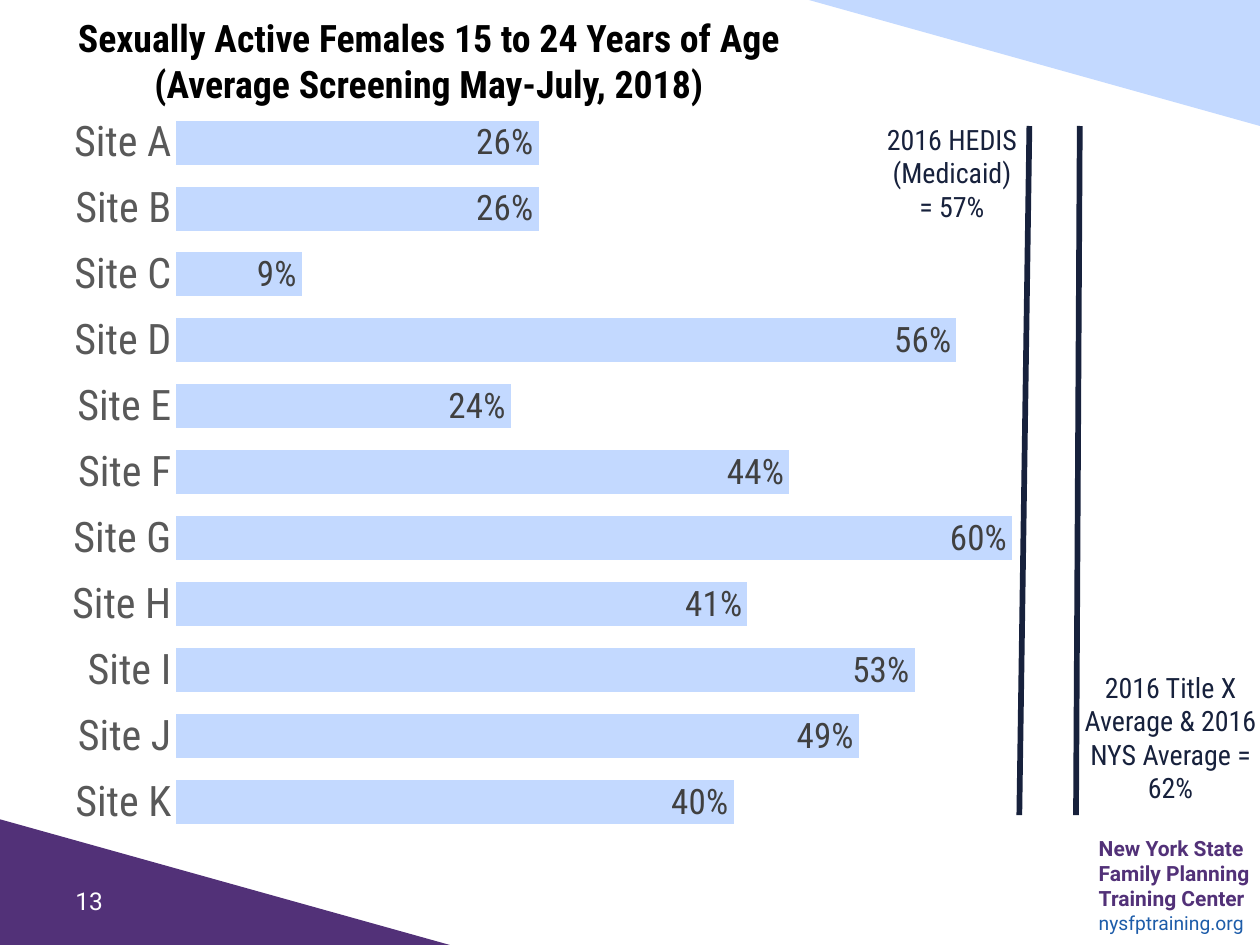
import pptx
import pptx.util
import pptx.chart.data
import pptx.dml.color
import pptx.enum.chart
import pptx.enum.shapes
import pptx.enum.text
import pptx.oxml
import pptx.oxml.ns
from pptx.util import Inches

PURPLE = "523178"
PALE_BLUE = "C3D9FF"
NAVY = "17213C"
BLACK = "000000"
WHITE = "FFFFFF"
CONDENSED = "Roboto Condensed"
ROBOTO = "Roboto"
CENTER = pptx.enum.text.PP_ALIGN.CENTER
LEFT = pptx.enum.text.PP_ALIGN.LEFT
TOP = pptx.enum.text.MSO_ANCHOR.TOP
MIDDLE = pptx.enum.text.MSO_ANCHOR.MIDDLE


def color(code):
    return pptx.dml.color.RGBColor.from_string(code)


def set_font(font, size, code, name, bold=False):
    font.size = pptx.util.Pt(size)
    font.color.rgb = color(code)
    font.name = name
    font.bold = bold


class SlideBuilder:
    def __init__(self, page):
        self.page = page

    def fill_text(self, box, lines, align, anchor=TOP, margin=None):
        frame = box.text_frame
        frame.word_wrap = True
        frame.auto_size = pptx.enum.text.MSO_AUTO_SIZE.NONE
        frame.vertical_anchor = anchor
        if margin is not None:
            frame.margin_left = frame.margin_right = Inches(margin)
            frame.margin_top = frame.margin_bottom = Inches(margin)
        for index, (words, *style) in enumerate(lines):
            para = frame.paragraphs[0] if index == 0 else frame.add_paragraph()
            para.text = words
            para.alignment = align
            set_font(para.font, *style)

    def title(self, left, top, width, height, lines):
        box = self.page.shapes.title
        box.left, box.top = Inches(left), Inches(top)
        box.width, box.height = Inches(width), Inches(height)
        self.fill_text(box, lines, CENTER)

    def text(self, left, top, width, height, lines, align=LEFT, **options):
        box = self.page.shapes.add_textbox(
            Inches(left), Inches(top), Inches(width), Inches(height))
        self.fill_text(box, lines, align, **options)

    def corner(self, left, top, width, height, code, rotation=0):
        shape = self.page.shapes.add_shape(
            pptx.enum.shapes.MSO_SHAPE.RIGHT_TRIANGLE,
            Inches(left), Inches(top), Inches(width), Inches(height))
        shape.rotation = rotation
        shape.shadow.inherit = False
        shape.fill.solid()
        shape.fill.fore_color.rgb = color(code)
        shape.line.fill.background()

    def line(self, start_x, start_y, end_x, end_y):
        line = self.page.shapes.add_connector(
            pptx.enum.shapes.MSO_CONNECTOR.STRAIGHT,
            Inches(start_x), Inches(start_y), Inches(end_x), Inches(end_y))
        line.line.color.rgb = color(NAVY)
        line.line.width = pptx.util.Pt(3.25)
        properties = line._element.spPr
        properties.append(pptx.oxml.parse_xml(
            f'<a:effectLst {pptx.oxml.ns.nsdecls("a")}/>'))

    def bar_chart(self, left, top, width, height, values):
        data = pptx.chart.data.CategoryChartData(number_format="0%")
        data.categories = list(values)
        data.add_series("Series 1", list(values.values()))
        chart = self.page.shapes.add_chart(
            pptx.enum.chart.XL_CHART_TYPE.BAR_CLUSTERED,
            Inches(left), Inches(top), Inches(width), Inches(height), data).chart
        chart.has_legend = False
        chart.has_title = False
        set_font(chart.font, 20, BLACK, CONDENSED)

        plot = chart.plots[0]
        plot.gap_width = 50
        plot.vary_by_categories = False
        fill = plot.series[0].format.fill
        fill.solid()
        fill.fore_color.rgb = color(PALE_BLUE)

        plot.has_data_labels = True
        labels = plot.data_labels
        labels.show_value = True
        labels.number_format = "0%"
        labels.number_format_is_linked = False
        labels.position = pptx.enum.chart.XL_LABEL_POSITION.INSIDE_END
        set_font(labels.font, 20, "404040", CONDENSED)

        sites = chart.category_axis
        sites.major_tick_mark = pptx.enum.chart.XL_TICK_MARK.NONE
        sites.format.line.fill.background()
        set_font(sites.tick_labels.font, 24, "595959", CONDENSED)

        scale = chart.value_axis
        scale.minimum_scale = 0
        scale.maximum_scale = 0.7
        scale.has_major_gridlines = False
        scale.visible = False
        self.place_plot(chart, x=0.11, y=0.02, w=0.86, h=0.96)

    def place_plot(self, chart, **fractions):
        area = chart._chartSpace.chart.plotArea
        for layout in area.findall(pptx.oxml.ns.qn("c:layout")):
            area.remove(layout)
        sizes = "".join(f'<c:{key} val="{value}"/>' for key, value in fractions.items())
        area.insert(0, pptx.oxml.parse_xml(
            f'<c:layout {pptx.oxml.ns.nsdecls("c")}><c:manualLayout>'
            '<c:layoutTarget val="inner"/><c:xMode val="edge"/><c:yMode val="edge"/>'
            f'{sizes}</c:manualLayout></c:layout>'))


def main():
    deck = pptx.Presentation()
    deck.slide_width, deck.slide_height = Inches(10), Inches(7.5)
    slide = SlideBuilder(deck.slides.add_slide(deck.slide_layouts[5]))

    slide.corner(-0.01, 6.5, 3.58, 1, PURPLE)
    center_style = (12, PURPLE, ROBOTO, True)
    slide.text(8.72, 6.63, 1.51, 0.81, [
        ("New York State", *center_style),
        ("Family Planning", *center_style),
        ("Training Center", *center_style),
        ("nysfptraining.org", 11, "1D5CA9", ROBOTO),
    ], margin=0)
    slide.corner(6.42, 0, 3.58, 1, PALE_BLUE, rotation=180)

    slide.line(8.57, 1, 8.54, 6.47)
    slide.line(8.17, 1, 8.09, 6.47)

    slide.bar_chart(0.41, 0.75, 9, 6, {
        "Site K": 0.40, "Site J": 0.49, "Site I": 0.53, "Site H": 0.41,
        "Site G": 0.60, "Site F": 0.44, "Site E": 0.24, "Site D": 0.56,
        "Site C": 0.09, "Site B": 0.26, "Site A": 0.26,
    })

    slide.text(0.5, 6.95, 1.4, 0.4, [("13", 14, WHITE, ROBOTO)], anchor=MIDDLE)
    note_style = (16, NAVY, CONDENSED)
    slide.text(8.48, 5.27, 1.62, 1.18, [
        ("2016 Title X Average & 2016 NYS Average = 62%", *note_style)], CENTER)
    slide.text(6.93, 0.92, 1.25, 0.91, [
        ("2016 HEDIS (Medicaid) = 57%", *note_style)], CENTER)
    title_style = (21.6, BLACK, CONDENSED, True)
    slide.title(0, 0.07, 6.81, 0.83, [
        ("Sexually Active Females 15 to 24 Years of Age", *title_style),
        ("(Average Screening May-July, 2018)", *title_style),
    ])
    deck.save("out.pptx")


if __name__ == "__main__":
    main()
